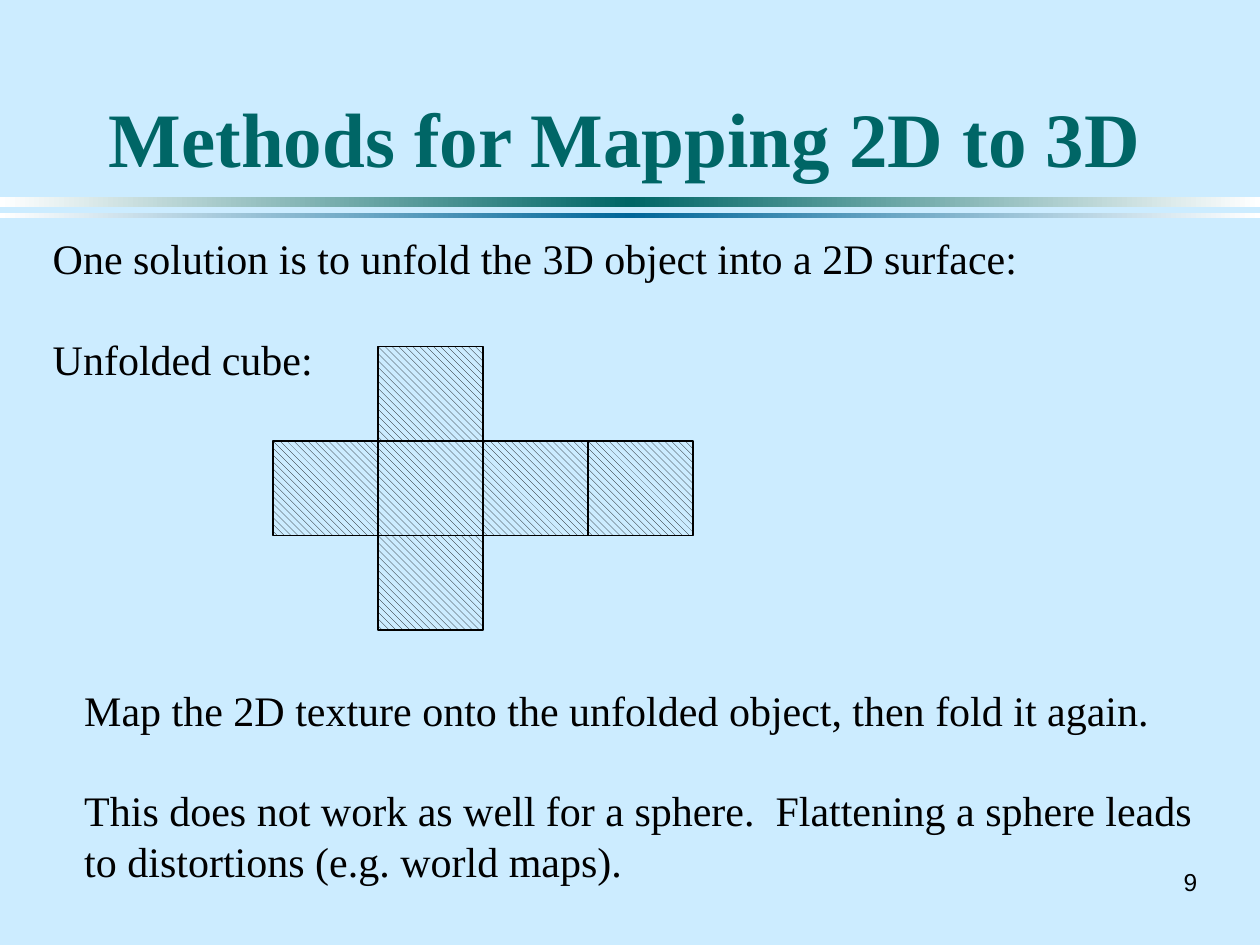
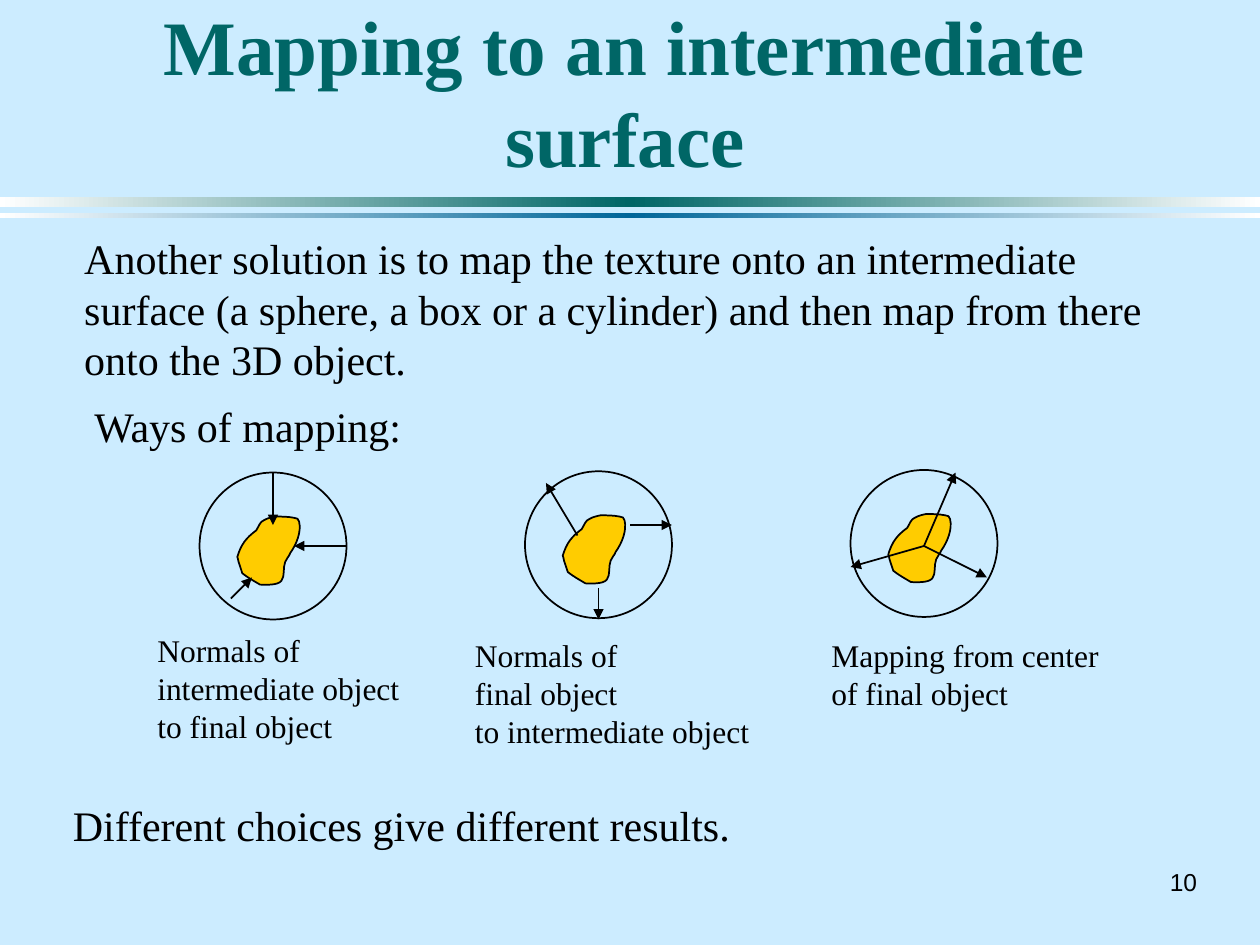
import copy
import dataclasses
import pptx
import pptx.util
import pptx.dml.color
import pptx.enum.dml
import pptx.enum.shapes
import pptx.enum.text
import pptx.oxml.ns
from lxml import etree

Inches, Pt = pptx.util.Inches, pptx.util.Pt
RGB = pptx.dml.color.RGBColor.from_string
SHAPE = pptx.enum.shapes.MSO_SHAPE
ALIGN = pptx.enum.text.PP_ALIGN
ANCHOR = pptx.enum.text.MSO_ANCHOR
qn = pptx.oxml.ns.qn


@dataclasses.dataclass(frozen=True)
class Theme:
    background: str = "CCECFF"
    ink: str = "000000"
    teal: str = "006666"
    blue: str = "006699"
    white: str = "FFFFFF"
    gold: str = "FFCC00"
    serif: str = "Times New Roman"
    sans: str = "Arial"
    title: int = 44
    body: int = 24
    caption: int = 18
    number: int = 14
    blank_line: float = 28.8
    line: float = 1


THEME = Theme()

BANDS = [(1.56, 0.08, THEME.teal), (1.69, 0.04, THEME.blue)]

UNFOLD = {
    "title": "Methods for Mapping 2D to 3D",
    "number": "9",
    "texts": [
        ((0.32, 1.8, 7.86, 1.3),
         ["One solution is to unfold the 3D object into a 2D surface:",
          "Unfolded cube:"],
         dict(wrap=False, gap=THEME.blank_line)),
        ((0.57, 5.38, 9.02, 1.7),
         ["Map the 2D texture onto the unfolded object, then fold it again.",
          "This does not work as well for a sphere.  Flattening a sphere "
          "leads to distortions (e.g. world maps)."],
         dict(gap=THEME.blank_line)),
    ],
}
CUBE_ORIGIN = (13 / 6, 2.75)
CUBE_FACE = (5 / 6, 0.75)
CUBE_CELLS = [(0, 1), (1, 1), (2, 1), (3, 1), (1, 0), (1, 2)]

INTERMEDIATE = {
    "title": "Mapping to an intermediate surface",
    "number": "10",
    "texts": [
        ((0.57, 1.8, 9.1, 1.3),
         ["Another solution is to map the texture onto an intermediate "
          "surface (a sphere, a box or a cylinder) and then map from there "
          "onto the 3D object."], {}),
        ((0.65, 3.13, 2.66, 0.5), ["Ways of mapping:"], dict(wrap=False)),
        ((0.48, 6.3, 5.43, 0.5),
         ["Different choices give different results."], dict(wrap=False)),
    ],
}
GRID = 12
WAYS = [
    {"caption": ["Normals of", "intermediate object", "to final object"],
     "box": (1.15, 4.96, 2.12, 1),
     "arrows": [((26, 45), (26, 50)), ((22, 57), (24, 55)), ((33, 52), (28, 52))]},
    {"caption": ["Normals of", "final object", "to intermediate object"],
     "box": (3.67, 5, 2.38, 1),
     "arrows": [((60, 50), (64, 50)), ((57, 56), (57, 59)), ((55, 51), (52, 46))]},
    {"caption": ["Mapping from center", "of final object"],
     "box": (6.5, 5, 2.33, 0.7),
     "arrows": [((88, 52), (91, 45)), ((88, 52), (81, 54)), ((88, 52), (94, 55))]},
]
CIRCLE_ORIGIN = (19 / 12, 3.75)
CIRCLE_STEP = (31 / 12, -0.01)
CIRCLE_SIZE = 7 / 6
BLOB_OFFSET = (0.3, 0.35)
BLOB_START = (0.18, 0.54)
BLOB_CURVES = [
    ((0.13, 0.51), (0.09, 0.49), (0.04, 0.45)),
    ((0.03, 0.42), (0.02, 0.39), (0.01, 0.36)),
    ((0.01, 0.35), (0, 0.32), (0, 0.32)),
    ((0.03, 0.22), (0.07, 0.17), (0.15, 0.11)),
    ((0.17, 0.08), (0.18, 0.04), (0.21, 0.03)),
    ((0.24, 0.01), (0.3, 0), (0.3, 0)),
    ((0.35, 0), (0.4, 0), (0.45, 0.01)),
    ((0.47, 0.01), (0.49, 0.02), (0.49, 0.04)),
    ((0.51, 0.12), (0.47, 0.22), (0.42, 0.29)),
    ((0.41, 0.32), (0.39, 0.33), (0.38, 0.36)),
    ((0.36, 0.41), (0.38, 0.47), (0.35, 0.51)),
    ((0.32, 0.55), (0.21, 0.54), BLOB_START),
]


def add_text(s, box, lines, size=THEME.body, font=THEME.serif, color=THEME.ink,
             bold=False, align=ALIGN.LEFT, anchor=ANCHOR.TOP, wrap=True, gap=0):
    tf = s.shapes.add_textbox(*map(Inches, box)).text_frame
    tf.word_wrap = wrap
    tf.vertical_anchor = anchor
    for i, line in enumerate(lines):
        p = tf.add_paragraph() if i else tf.paragraphs[0]
        p.alignment = align
        p.space_before = Pt(gap if i else 0)
        r = p.add_run()
        r.text = line
        r.font.size, r.font.name, r.font.bold = Pt(size), font, bold
        r.font.color.rgb = RGB(color)


def outline(shape):
    shape.shadow.inherit = False
    shape.line.color.rgb = RGB(THEME.ink)
    shape.line.width = Pt(THEME.line)


def add_band(s, top, height, color):
    sp = s.shapes.add_shape(SHAPE.RECTANGLE, 0, Inches(top), Inches(10), Inches(height))
    sp.shadow.inherit = False
    sp.line.fill.background()
    sp.fill.gradient()
    sp.fill.gradient_angle = 0
    stops = sp._element.spPr.find(".//" + qn("a:gsLst"))
    stops.insert(1, copy.deepcopy(stops[0]))
    colors = (THEME.white, color, THEME.white)
    for stop, position, rgb in zip(sp.fill.gradient_stops, (0, 0.5, 1), colors):
        stop.position = position
        stop.color.rgb = RGB(rgb)


def add_base(prs, content):
    s = prs.slides.add_slide(prs.slide_layouts[6])
    s.background.fill.solid()
    s.background.fill.fore_color.rgb = RGB(THEME.background)
    for band in BANDS:
        add_band(s, *band)
    add_text(s, (9.17, 6.83, 0.43, 0.33), [content["number"]], size=THEME.number,
             font=THEME.sans, align=ALIGN.RIGHT, anchor=ANCHOR.MIDDLE, wrap=False)
    add_text(s, (0.67, 0.25, 8.58, 1.25), [content["title"]], size=THEME.title,
             color=THEME.teal, bold=True, align=ALIGN.CENTER, anchor=ANCHOR.BOTTOM)
    for box, lines, options in content["texts"]:
        add_text(s, box, lines, **options)
    return s


def add_face(s, column, row):
    left, top = CUBE_ORIGIN
    width, height = CUBE_FACE
    sp = s.shapes.add_shape(SHAPE.RECTANGLE, Inches(left + column * width),
                            Inches(top + row * height), Inches(width), Inches(height))
    outline(sp)
    sp.fill.patterned()
    sp.fill.pattern = pptx.enum.dml.MSO_PATTERN.WIDE_DOWNWARD_DIAGONAL
    sp.fill.fore_color.rgb = RGB(THEME.ink)
    sp.fill.back_color.rgb = RGB(THEME.background)


def add_blob(s, left, top):
    ends = [tuple(map(Inches, curve[-1])) for curve in BLOB_CURVES]
    builder = s.shapes.build_freeform(*map(Inches, BLOB_START))
    builder.add_line_segments(ends, close=True)
    sp = builder.convert_to_shape(Inches(left), Inches(top))
    segments = list(sp._element.spPr.iter(qn("a:lnTo")))
    for segment, curve in zip(segments, BLOB_CURVES):
        bezier = etree.Element(qn("a:cubicBezTo"))
        for x, y in curve:
            etree.SubElement(bezier, qn("a:pt"), x=str(Inches(x)), y=str(Inches(y)))
        segment.getparent().replace(segment, bezier)
    outline(sp)
    sp.fill.solid()
    sp.fill.fore_color.rgb = RGB(THEME.gold)


def add_arrow(s, start, end):
    ends = [Inches(v / GRID) for v in start + end]
    line = s.shapes.add_connector(pptx.enum.shapes.MSO_CONNECTOR.STRAIGHT, *ends)
    line.line.color.rgb = RGB(THEME.ink)
    line.line.width = Pt(THEME.line)
    ln = line._element.spPr.find(qn("a:ln"))
    etree.SubElement(ln, qn("a:tailEnd"), type="triangle")
    etree.SubElement(line._element.spPr, qn("a:effectLst"))


def add_way(s, index, way):
    left, top = (o + index * d for o, d in zip(CIRCLE_ORIGIN, CIRCLE_STEP))
    circle = s.shapes.add_shape(SHAPE.OVAL, Inches(left), Inches(top),
                                Inches(CIRCLE_SIZE), Inches(CIRCLE_SIZE))
    outline(circle)
    circle.fill.background()
    add_blob(s, left + BLOB_OFFSET[0], top + BLOB_OFFSET[1])
    for start, end in way["arrows"]:
        add_arrow(s, start, end)
    add_text(s, way["box"], way["caption"], size=THEME.caption, wrap=False)


def main():
    prs = pptx.Presentation()
    prs.slide_width, prs.slide_height = Inches(10), Inches(7.5)
    s = add_base(prs, UNFOLD)
    for column, row in CUBE_CELLS:
        add_face(s, column, row)
    s = add_base(prs, INTERMEDIATE)
    for index, way in enumerate(WAYS):
        add_way(s, index, way)
    prs.save("out.pptx")


if __name__ == "__main__":
    main()
